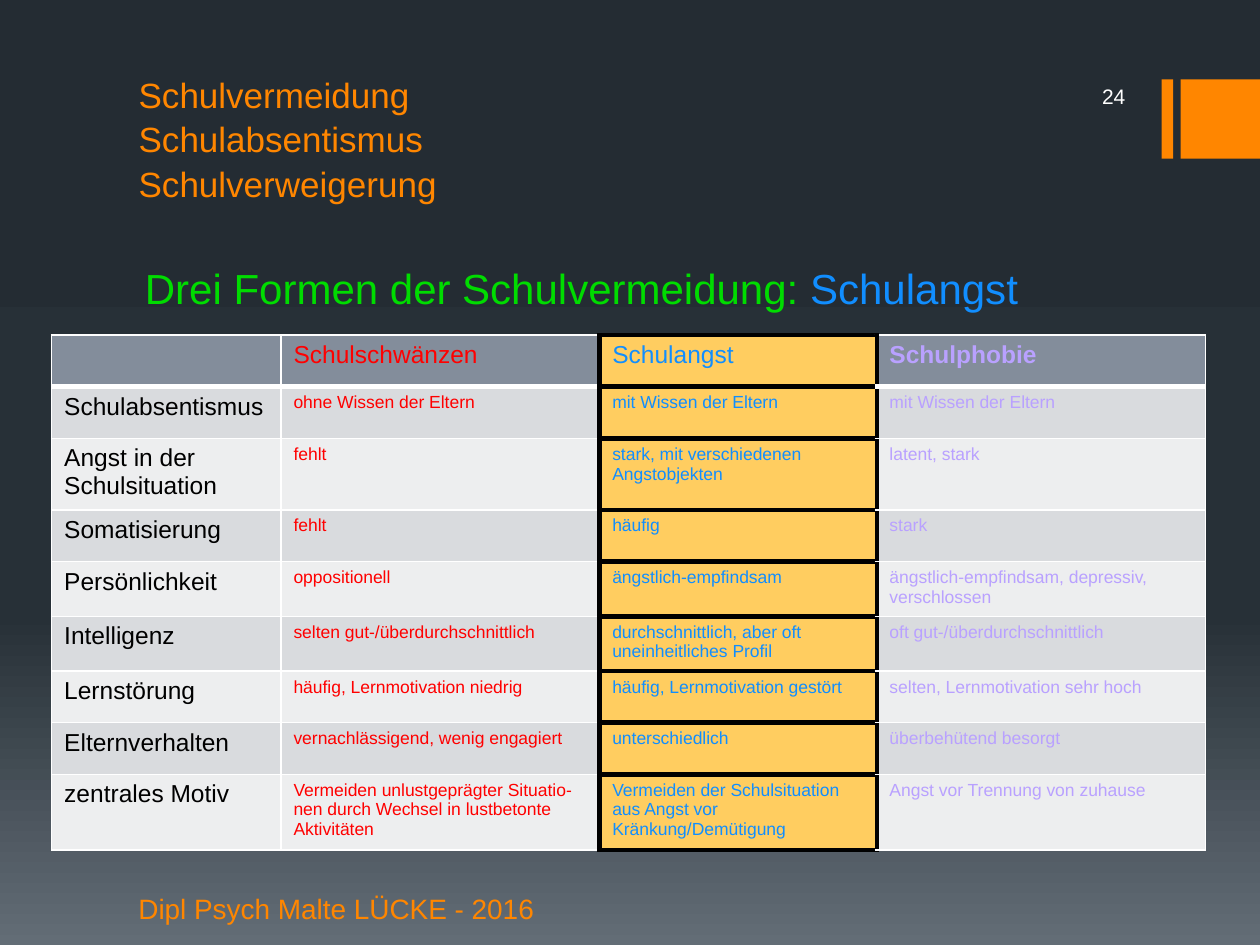
from copy import deepcopy

from lxml.etree import SubElement
from pptx import Presentation
from pptx.dml.color import RGBColor
from pptx.enum.shapes import MSO_SHAPE as Shape
from pptx.enum.text import MSO_ANCHOR as Anchor, MSO_AUTO_SIZE as AutoSize, PP_ALIGN as Align
from pptx.oxml.ns import qn
from pptx.util import Inches, Pt

ORANGE, GREEN, BLUE, RED, LILAC = "FF8600", "00DC00", "118EFF", "FF0000", "B9A1FF"
BLACK, WHITE = "000000", "FFFFFF"
HEADER_FILL, BAND_FILLS, FOCUS_FILL = "838D9B", ("EDEEEF", "D9DBDE"), "FFCD60"
FOCUS_COLUMN = 2
COLUMN_COLORS = (BLACK, RED, BLUE, LILAC)
COLUMN_WIDTHS = (1.82, 2.53, 2.2, 2.61)
ROW_HEIGHT = 0.41

ROWS = [
    ("", "Schulschwänzen", "Schulangst", "Schulphobie"),
    ("Schulabsentismus", "ohne Wissen der Eltern", "mit Wissen der Eltern",
     "mit Wissen der Eltern"),
    ("Angst in der Schulsituation", "fehlt", "stark, mit verschiedenen\nAngstobjekten",
     "latent, stark"),
    ("Somatisierung", "fehlt", "häufig", "stark"),
    ("Persönlichkeit", "oppositionell", "ängstlich-empfindsam",
     "ängstlich-empfindsam, depressiv, verschlossen"),
    ("Intelligenz", "selten gut-/überdurchschnittlich",
     "durchschnittlich, aber oft\nuneinheitliches Profil", "oft gut-/überdurchschnittlich"),
    ("Lernstörung", "häufig, Lernmotivation niedrig", "häufig, Lernmotivation gestört",
     "selten, Lernmotivation sehr hoch"),
    ("Elternverhalten", "vernachlässigend, wenig engagiert", "unterschiedlich",
     "überbehütend besorgt"),
    ("zentrales Motiv",
     "Vermeiden unlustgeprägter Situatio-nen durch Wechsel in lustbetonte Aktivitäten",
     "Vermeiden der Schulsituation aus Angst vor Kränkung/Demütigung",
     "Angst vor Trennung von zuhause"),
]


def rgb(color):
    return RGBColor.from_string(color)


def place(shape, left, top, width, height):
    shape.left, shape.top = Inches(left), Inches(top)
    shape.width, shape.height = Inches(width), Inches(height)


class SlideBuilder:
    font_name = "Arial"

    def __init__(self, slide):
        self.slide = slide

    def style(self, font, size, color, bold=False):
        font.name, font.size, font.bold = self.font_name, Pt(size), bold
        font.color.rgb = rgb(color)

    def background(self, stops):
        fill = self.slide.background.fill
        fill.gradient()
        fill.gradient_angle = 270
        stop_list = self.slide.element.find(".//" + qn("a:gsLst"))
        while len(stop_list) < len(stops):
            stop_list.append(deepcopy(stop_list[0]))
        for stop, (position, color) in zip(fill.gradient_stops, stops):
            stop.position = position
            stop.color.rgb = rgb(color)

    def bar(self, left, top, width, height):
        shape = self.slide.shapes.add_shape(
            Shape.RECTANGLE, Inches(left), Inches(top), Inches(width), Inches(height))
        shape.shadow.inherit = False
        shape.fill.solid()
        shape.fill.fore_color.rgb = rgb(ORANGE)
        shape.line.fill.background()

    def title(self, text, box):
        shape = self.slide.shapes.title
        place(shape, *box)
        frame = shape.text_frame
        frame.auto_size, frame.vertical_anchor = AutoSize.NONE, Anchor.BOTTOM
        paragraph = frame.paragraphs[0]
        paragraph.text = text
        paragraph.alignment, paragraph.line_spacing = Align.LEFT, 1.05
        self.style(paragraph.font, 20, ORANGE)

    def body(self, runs, box):
        shape = self.slide.placeholders[1]
        place(shape, *box)
        shape.text_frame.auto_size = AutoSize.NONE
        paragraph = shape.text_frame.paragraphs[0]
        paragraph.space_before = Pt(2)
        properties = paragraph._p.get_or_add_pPr()
        properties.set("marL", str(Inches(0.05)))
        properties.set("indent", "0")
        SubElement(properties, qn("a:buNone"))
        for text, color in runs:
            run = paragraph.add_run()
            run.text = text
            self.style(run.font, 24, color)

    def text(self, text, box, size, color, align=Align.LEFT, anchor=Anchor.TOP, inset_top=0.05):
        shape = self.slide.shapes.add_textbox(*map(Inches, box))
        frame = shape.text_frame
        frame.word_wrap, frame.vertical_anchor = True, anchor
        frame.margin_top = Inches(inset_top)
        paragraph = frame.paragraphs[0]
        paragraph.text, paragraph.alignment = text, align
        self.style(paragraph.font, size, color)

    def border(self, cell, side, color, width):
        line = SubElement(cell._tc.get_or_add_tcPr(), qn("a:ln" + side), w=str(Pt(width)))
        fill = SubElement(line, qn("a:solidFill"))
        SubElement(fill, qn("a:srgbClr"), val=color)

    def cell(self, cell, text, row, column):
        header, focus = row == 0, column == FOCUS_COLUMN
        # Borders: black around the focus column, white elsewhere
        for side in "LRTB":
            beside_focus = (side, column) in (("R", FOCUS_COLUMN - 1), ("L", FOCUS_COLUMN + 1))
            black = focus or beside_focus
            thick = black or (header and side == "B")
            self.border(cell, side, BLACK if black else WHITE, 3 if thick else 1)
        cell.fill.solid()
        band = HEADER_FILL if header else BAND_FILLS[row % 2]
        cell.fill.fore_color.rgb = rgb(FOCUS_FILL if focus else band)
        # Text
        cell.text_frame.text = text
        size = 14 if header or column == 0 else 10
        for paragraph in cell.text_frame.paragraphs:
            self.style(paragraph.font, size, COLUMN_COLORS[column], header and column == 3)

    def table(self, rows, left, top):
        table = self.slide.shapes.add_table(
            len(rows), len(COLUMN_WIDTHS), Inches(left), Inches(top),
            Inches(sum(COLUMN_WIDTHS)), Inches(ROW_HEIGHT * len(rows))).table
        table.first_row = table.horz_banding = False
        for column, width in zip(table.columns, COLUMN_WIDTHS):
            column.width = Inches(width)
        for row, texts in enumerate(rows):
            table.rows[row].height = Inches(ROW_HEIGHT)
            for column, text in enumerate(texts):
                self.cell(table.cell(row, column), text, row, column)


def main():
    presentation = Presentation()
    presentation.slide_width, presentation.slide_height = Inches(10), Inches(7.5)
    builder = SlideBuilder(presentation.slides.add_slide(presentation.slide_layouts[1]))

    # Background and corner bars
    builder.background([(0, "242C33"), (0.65, "273037"), (1, "636D76")])
    for left, width in ((9.22, 0.09), (9.37, 0.63)):
        builder.bar(left, 0.63, width, 0.63)

    # Title, subtitle, footer and page number
    builder.title("Schulvermeidung\nSchulabsentismus\nSchulverweigerung", (1, 0.6, 4.91, 1.07))
    builder.body([("Drei Formen der Schulvermeidung: ", GREEN), ("Schulangst", BLUE)],
                 (1, 2.03, 8.23, 4.87))
    builder.text("Dipl Psych Malte LÜCKE - 2016", (1, 7.08, 3.49, 0.33), 16, ORANGE, inset_top=0)
    builder.text("24", (8, 0.6, 1.03, 0.33), 12, WHITE, Align.RIGHT, Anchor.MIDDLE)

    # Comparison table
    builder.table(ROWS, 0.41, 2.66)
    presentation.save("out.pptx")


if __name__ == "__main__":
    main()
